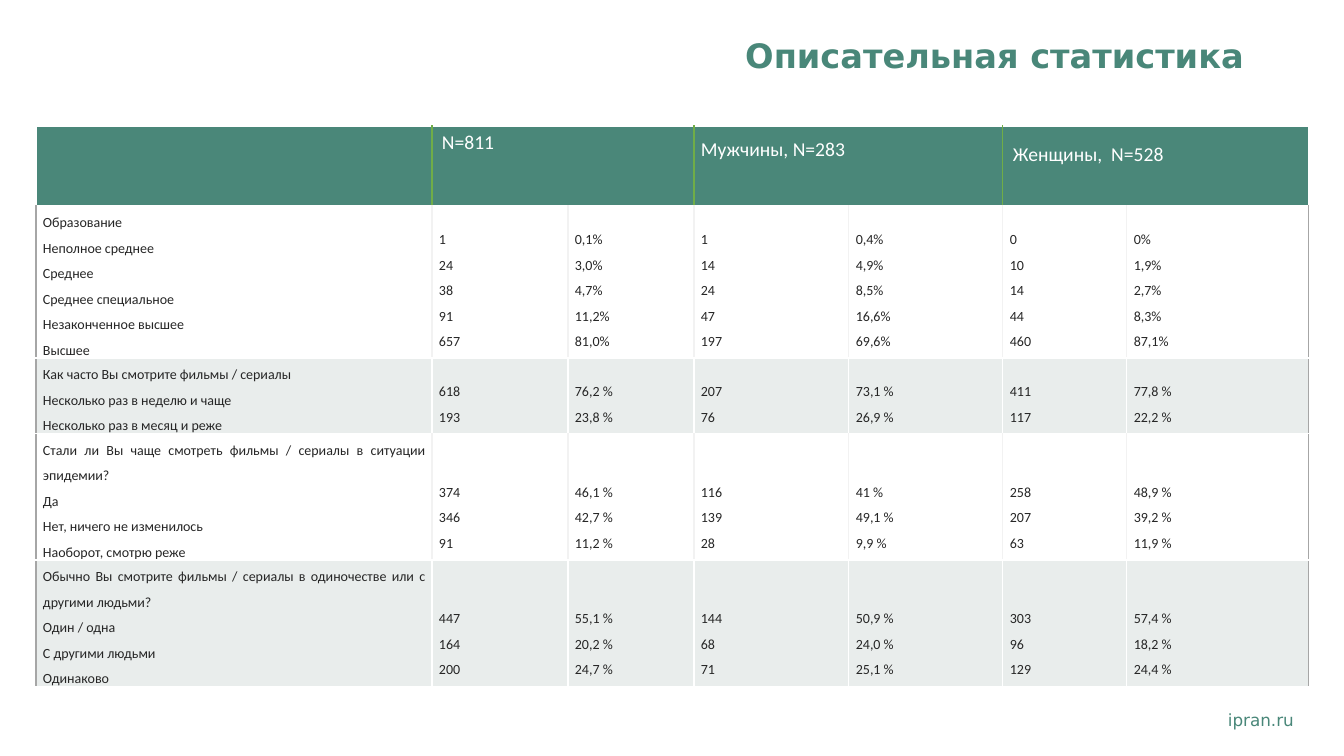
from lxml import etree
from pptx import Presentation
from pptx.dml.color import RGBColor
from pptx.enum.text import MSO_ANCHOR, PP_ALIGN
from pptx.oxml.ns import qn
from pptx.util import Pt

RIGHT, JUSTIFY, LEFT = PP_ALIGN.RIGHT, PP_ALIGN.JUSTIFY, PP_ALIGN.LEFT
TOP = MSO_ANCHOR.TOP
TITLE_ONLY = 5
EMU_PER_PX = 914400 / 100.8
COLORS = {
    "title": "498779", "header": "4A8779", "divider": "70AD47",
    "white": "FFFFFF", "band": "E9EDEC", "text": "262626",
    "inner": "F2F2F2", "edge": "A6A6A6",
}
HEAD_FONT, BODY_FONT = "DejaVu Sans", "Calibri"
COL_WIDTHS = [396, 136, 126, 155, 154, 124, 182]
ROW_HEIGHTS = [80, 152, 75, 126, 126]
FIRST_LINE, NEXT_LINE = 17, 25

# Header: text, line spacing, side margin, top margin
HEADERS = [
    ("N=811", 1.0, 10, 5),
    ("Мужчины, N=283", 1.5, 7, 0),
    ("Женщины,  N=528", 1.5, 10, 5),
]
# Each question: height in lines, answers, then one list per number column
QUESTIONS = [
    (1, ["Образование", "Неполное среднее", "Среднее", "Среднее специальное",
         "Незаконченное высшее", "Высшее"],
     [["1", "24", "38", "91", "657"],
      ["0,1%", "3,0%", "4,7%", "11,2%", "81,0%"],
      ["1", "14", "24", "47", "197"],
      ["0,4%", "4,9%", "8,5%", "16,6%", "69,6%"],
      ["0", "10", "14", "44", "460"],
      ["0%", "1,9%", "2,7%", "8,3%", "87,1%"]]),
    (1, ["Как часто Вы смотрите фильмы / сериалы",
         "Несколько раз в неделю и чаще", "Несколько раз в месяц и реже"],
     [["618", "193"], ["76,2 %", "23,8 %"], ["207", "76"],
      ["73,1 %", "26,9 %"], ["411", "117"], ["77,8 %", "22,2 %"]]),
    (2, ["Стали ли Вы чаще смотреть фильмы / сериалы в ситуации эпидемии?",
         "Да", "Нет, ничего не изменилось", "Наоборот, смотрю реже"],
     [["374", "346", "91"], ["46,1 %", "42,7 %", "11,2 %"],
      ["116", "139", "28"], ["41 %", "49,1 %", "9,9 %"],
      ["258", "207", "63"], ["48,9 %", "39,2 %", "11,9 %"]]),
    (2, ["Обычно Вы смотрите фильмы / сериалы в одиночестве или с другими людьми?",
         "Один / одна", "С другими людьми", "Одинаково"],
     [["447", "164", "200"], ["55,1 %", "20,2 %", "24,7 %"],
      ["144", "68", "71"], ["50,9 %", "24,0 %", "25,1 %"],
      ["303", "96", "129"], ["57,4 %", "18,2 %", "24,4 %"]]),
]


def px(n):
    return round(n * EMU_PER_PX)


def write(tf, lines, font, size, color, align, spacing=1.0, bold=False):
    for i, line in enumerate(lines):
        p = tf.paragraphs[0] if i == 0 else tf.add_paragraph()
        p.alignment, p.line_spacing = align, spacing
        p.space_before = p.space_after = Pt(0)
        r = p.add_run()
        r.text = line
        r.font.name, r.font.size, r.font.bold = font, Pt(size), bold
        r.font.color.rgb = RGBColor.from_string(COLORS[color])


def style_cell(cell, fill, left, right):
    """Borders come before the fill in the cell properties."""
    tcPr = cell._tc.get_or_add_tcPr()
    for tag, color in (("lnL", left), ("lnR", right),
                       ("lnT", "white"), ("lnB", "white")):
        ln = etree.SubElement(tcPr, qn("a:" + tag), w=str(Pt(1)))
        solid = etree.SubElement(ln, qn("a:solidFill"))
        etree.SubElement(solid, qn("a:srgbClr"), val=COLORS[color])
    cell.fill.solid()
    cell.fill.fore_color.rgb = RGBColor.from_string(COLORS[fill])


def set_margins(cell, side, top, bottom):
    cell.margin_left = cell.margin_right = px(side)
    cell.margin_top, cell.margin_bottom = px(top), px(bottom)


def add_title(s, x, y, w, h):
    sp = s.shapes.title
    sp.left, sp.top, sp.width, sp.height = px(x), px(y), px(w), px(h)
    tf = sp.text_frame
    tf.word_wrap, tf.vertical_anchor = True, TOP
    write(tf, ["Описательная статистика"], HEAD_FONT, 24, "title", RIGHT, 0.9, True)


def add_site(s, x, y, w, h):
    tf = s.shapes.add_textbox(px(x), px(y), px(w), px(h)).text_frame
    tf.word_wrap = True
    write(tf, ["ipran.ru"], HEAD_FONT, 12, "title", LEFT)


def fill_header(table):
    last = len(COL_WIDTHS) - 1
    for c in range(last + 1):
        style_cell(table.cell(0, c), "header",
                   "divider" if c else "white", "white" if c >= last - 1 else "divider")
    for i, (text, spacing, side, top) in enumerate(HEADERS):
        cell = table.cell(0, 1 + 2 * i)
        cell.merge(table.cell(0, 2 + 2 * i))
        set_margins(cell, side, top, top)
        write(cell.text_frame, [text], BODY_FONT, 14, "white",
              JUSTIFY if i else LEFT, spacing)


def fill_question(table, row, question_lines, labels, columns):
    fill, inner = ("white", "inner") if row % 2 else ("band", "white")
    # Numbers start below the question, level with the answers
    number_top = FIRST_LINE + (question_lines - 1) * NEXT_LINE
    for c, lines in enumerate([labels] + columns):
        cell = table.cell(row, c)
        style_cell(cell, fill, inner if c else "edge",
                   "edge" if c == len(columns) else inner)
        set_margins(cell, 7, number_top if c else 0, 0)
        write(cell.text_frame, lines, BODY_FONT, 10, "text", JUSTIFY, 1.5)


def add_statistics(s, x, y):
    table = s.shapes.add_table(len(ROW_HEIGHTS), len(COL_WIDTHS), px(x), px(y),
                               px(sum(COL_WIDTHS)), px(sum(ROW_HEIGHTS))).table
    table.first_row = table.horz_banding = False
    for column, width in zip(table.columns, COL_WIDTHS):
        column.width = px(width)
    for row, height in zip(table.rows, ROW_HEIGHTS):
        row.height = px(height)
    fill_header(table)
    for i, question in enumerate(QUESTIONS, 1):
        fill_question(table, i, *question)


def main():
    prs = Presentation()
    prs.slide_width, prs.slide_height = px(1344), px(756)
    s = prs.slides.add_slide(prs.slide_layouts[TITLE_ONLY])
    add_site(s, 1218, 705, 105, 30)
    add_statistics(s, 36, 126)
    add_title(s, 513, 34, 741, 57)
    prs.save("out.pptx")


if __name__ == "__main__":
    main()
